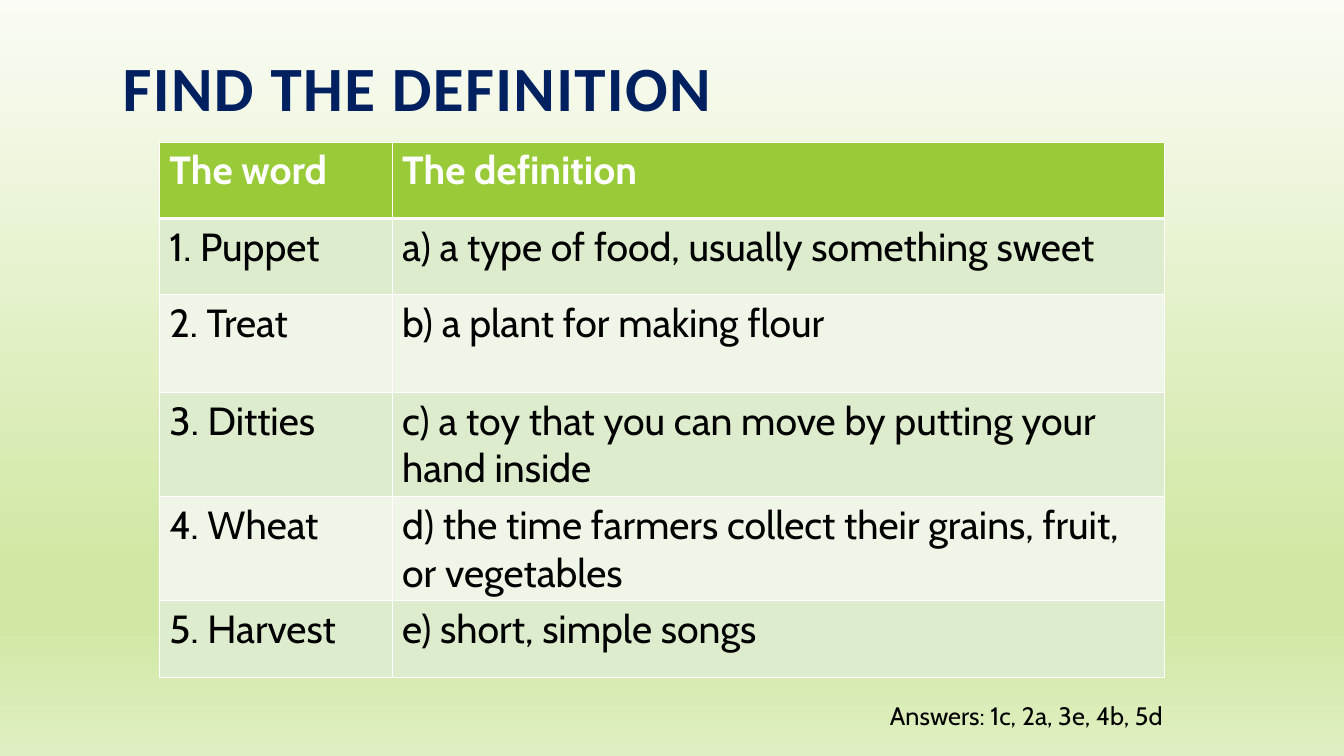
from dataclasses import dataclass
from lxml.etree import SubElement
from pptx import Presentation
from pptx.dml.color import RGBColor
from pptx.enum.text import MSO_ANCHOR
from pptx.oxml.ns import qn
from pptx.util import Pt


@dataclass(frozen=True)
class Theme:
    navy: str = "002060"
    black: str = "000000"
    white: str = "FFFFFF"
    green: str = "99CB38"
    bands: tuple = ("DEECCE", "EFF6E8")
    sky: tuple = ((0, "FAFCF5"), (74, "D1E8A5"), (83, "D1E8A5"), (100, "E0EFC3"))
    head: str = "Calibri"
    body: str = "Cabin"
    big: int = 45
    mid: int = 28
    small: int = 18


class Board:
    def __init__(self, deck, theme):
        self.theme = theme
        self.slide = deck.slides.add_slide(deck.slide_layouts[6])

    def back(self, stops):
        fill = self.slide.background.fill
        fill.gradient()
        fill.gradient_angle = 270
        ramp = next(self.slide.element.iter(qn("a:gsLst")))
        for old in list(ramp):
            ramp.remove(old)
        for pos, color in stops:
            stop = SubElement(ramp, qn("a:gs"), pos=str(pos * 1000))
            SubElement(stop, qn("a:srgbClr"), val=color)

    def words(self, para, text, size, color, face, bold=False):
        run = para.add_run()
        run.text = text
        font = run.font
        font.size, font.name, font.bold = Pt(size), face, bold
        font.color.rgb = RGBColor.from_string(color)
        return run

    def label(self, box, text, size, color, face, bold=False,
              anchor=MSO_ANCHOR.TOP, lead=1.0, gap=0):
        frame = self.slide.shapes.add_textbox(*map(Pt, box)).text_frame
        frame.word_wrap = True
        frame.vertical_anchor = anchor
        para = frame.paragraphs[0]
        para.line_spacing = lead
        run = self.words(para, text, size, color, face, bold)
        if gap:
            run.font._element.set("spc", str(gap * 100))

    def edge(self, cell, side, width):
        line = SubElement(cell._tc.get_or_add_tcPr(), qn("a:ln" + side),
                          w=str(Pt(width)))
        fill = SubElement(line, qn("a:solidFill"))
        SubElement(fill, qn("a:srgbClr"), val=self.theme.white)

    def grid(self, left, top, cols, rows, data):
        look = self.theme
        table = self.slide.shapes.add_table(
            len(rows), len(cols), Pt(left), Pt(top),
            Pt(sum(cols)), Pt(sum(rows))).table
        for col, width in zip(table.columns, cols):
            col.width = Pt(width)
        for r, (row, height, texts) in enumerate(zip(table.rows, rows, data)):
            row.height = Pt(height)
            first = r == 0
            shade = look.green if first else look.bands[(r - 1) % 2]
            color = look.white if first else look.black
            # A thick rule parts the header from the words
            rules = {"L": 1, "R": 1, "T": 3 if r == 1 else 1, "B": 3 if first else 1}
            for cell, text in zip(row.cells, texts):
                for side, width in rules.items():
                    self.edge(cell, side, width)
                cell.fill.solid()
                cell.fill.fore_color.rgb = RGBColor.from_string(shade)
                self.words(cell.text_frame.paragraphs[0], text, look.mid,
                           color, look.body, first)


def main():
    deck = Presentation()
    deck.slide_width, deck.slide_height = Pt(960), Pt(540)
    look = Theme()
    board = Board(deck, look)

    # Background
    board.back(look.sky)

    # Title
    board.label((80.6, 46, 790, 42), "FIND THE DEFINITION", look.big, look.navy,
                look.head, bold=True, anchor=MSO_ANCHOR.MIDDLE, lead=0.8, gap=1)

    # Words and definitions
    low, tall = 54.5, 69.8
    board.grid(113.8, 101.5, (166.3, 551.5), (low, low, tall, tall, tall, low), (
        ("The word", "The definition"),
        ("1. Puppet", "a) a type of food, usually something sweet"),
        ("2. Treat", "b) a plant for making flour"),
        ("3. Ditties", "c) a toy that you can move by putting your hand inside"),
        ("4. Wheat", "d) the time farmers collect their grains, fruit, or vegetables"),
        ("5. Harvest", "e) short, simple songs"),
    ))

    # Answers
    board.label((628.6, 496.8, 217.4, 30), "Answers: 1c, 2a, 3e, 4b, 5d",
                look.small, look.black, look.body)

    deck.save("out.pptx")


if __name__ == "__main__":
    main()
